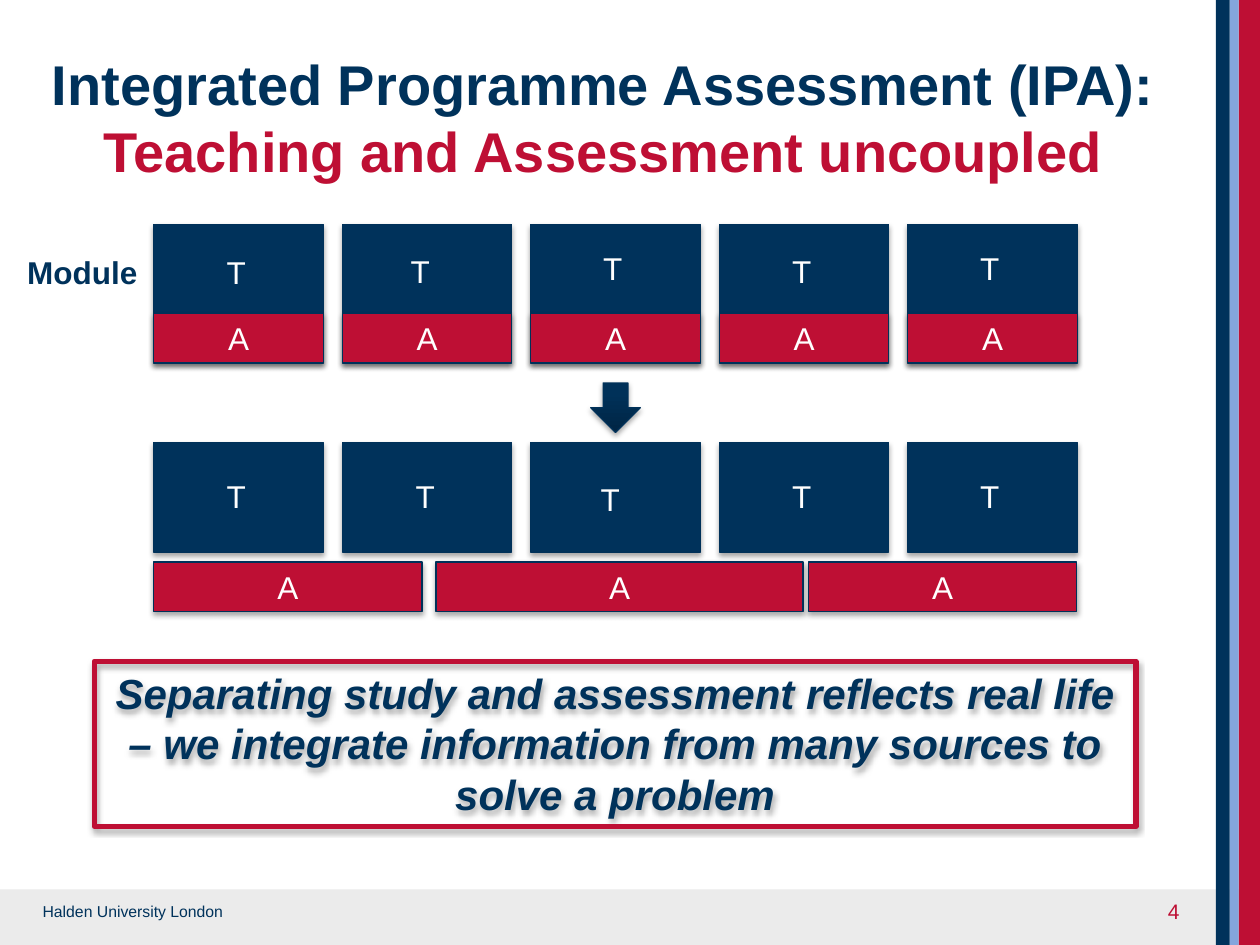
"""Builds a slide on uncoupling teaching from assessment across modules."""
from lxml import etree
from pptx import Presentation, util as u
from pptx.dml.color import RGBColor
from pptx.enum import shapes, text
from pptx.oxml import ns

COLOURS = {"navy": "00325B", "red": "BE0F34", "sky": "84A5DC", "grey": "EBEBEB",
           "white": "FFFFFF", "edge": "003159", "deep": "002544"}
RGB = {name: RGBColor.from_string(value) for name, value in COLOURS.items()}
RECT = shapes.MSO_SHAPE.RECTANGLE
SHADOW = (f'<a:outerShdw {ns.nsdecls("a")} blurRad="40000" dist="23000" dir="5400000" '
          'rotWithShape="0"><a:srgbClr val="000000"><a:alpha val="35000"/></a:srgbClr></a:outerShdw>')


def write(holder, words, size=18, colour="white", bold=False, italic=False,
          align="LEFT", anchor="TOP", wrap=True):
    frame = holder.text_frame
    frame.word_wrap = wrap
    frame.auto_size = text.MSO_AUTO_SIZE.NONE
    frame.vertical_anchor = text.MSO_ANCHOR[anchor]
    paragraph = frame.paragraphs[0]
    paragraph.alignment = text.PP_ALIGN[align]
    run = paragraph.add_run()
    run.text = words
    run.font.name = "Arial"
    run.font.size = u.Pt(size)
    run.font.bold, run.font.italic = bold, italic
    run.font.color.rgb = RGB[colour]


def block(left, top, width, height, colour, kind=RECT, raised=True):
    part = slide.shapes.add_shape(kind, u.Cm(left), u.Cm(top), u.Cm(width), u.Cm(height))
    part.shadow.inherit = False
    part.fill.solid()
    part.fill.fore_color.rgb = RGB[colour]
    if raised:
        part.line.color.rgb = RGB["edge"]
        part.line.width = u.Pt(0.75)
        part._element.spPr.find(ns.qn("a:effectLst")).append(etree.fromstring(SHADOW))
    else:
        part.line.fill.background()
    return part


deck = Presentation()
deck.slide_width, deck.slide_height = u.Cm(25.4), u.Cm(19.05)
slide = deck.slides.add_slide(deck.slide_layouts[5])

block(0, 17.93, 25.4, 1.12, "grey", raised=False)
for left, width, colour in [(24.97, 0.43, "red"), (24.79, 0.18, "sky"), (24.51, 0.28, "navy")]:
    block(left, 0, width, 19.05, colour, raised=False)

title = slide.shapes.title
title.left, title.top, title.width, title.height = u.Cm(0.61), u.Cm(0.76), u.Cm(23.11), u.Cm(3.18)
for words, colour in [("Integrated Programme Assessment (IPA): ", "navy"),
                      ("Teaching and Assessment uncoupled", "red")]:
    write(title, words, size=32, colour=colour, bold=True, align="CENTER", anchor="MIDDLE")

university = slide.shapes.add_textbox(u.Cm(0.61), u.Cm(18.06), u.Cm(4.5), u.Cm(0.64))
write(university, "Halden University London", size=9, colour="navy")
page_number = slide.shapes.add_textbox(u.Cm(18.11), u.Cm(17.86), u.Cm(5.92), u.Cm(1.02))
write(page_number, "4", size=12, colour="red", align="RIGHT", anchor="MIDDLE")

message = block(1.9, 13.33, 21, 3.33, "white")
message.shadow.inherit = False
message.fill.background()
message.line.color.rgb = RGB["red"]
message.line.width = u.Pt(3)
write(message, "Separating study and assessment reflects real life – we integrate "
      "information from many sources to solve a problem",
      size=24, colour="navy", bold=True, italic=True, align="CENTER")

uncoupling = block(11.91, 7.72, 1, 1, "navy", kind=shapes.MSO_SHAPE.DOWN_ARROW)
uncoupling.fill.gradient()
uncoupling.fill.gradient_angle = 90
for stop, position, colour in zip(uncoupling.fill.gradient_stops, (0, 0.8), ("deep", "edge")):
    stop.position = position
    stop.color.rgb = RGB[colour]

module_lefts = [3.1 + 3.8 * column for column in range(5)]
rows = [
    {"top": 4.52, "height": 2.79, "assessment_top": 6.32,
     "assessments": [(left, 3.42) for left in module_lefts],
     "letters": [(4.32, 4.98), (8.03, 4.95), (11.91, 4.9), (15.72, 4.95), (19.51, 4.9)]},
    {"top": 8.92, "height": 2.21, "assessment_top": 11.33,
     "assessments": [(3.1, 5.41), (8.79, 7.4), (16.3, 5.41)],
     "letters": [(4.32, 9.5), (8.13, 9.5), (11.86, 9.55), (15.72, 9.5), (19.51, 9.5)]},
]
for row in rows:
    for left in module_lefts:
        block(left, row["top"], 3.42, row["height"], "navy")
    for left, width in row["assessments"]:
        assessment = block(left, row["assessment_top"], width, 1, "red")
        write(assessment, "A", align="CENTER", anchor="MIDDLE")
    for left, top in row["letters"]:
        teaching = slide.shapes.add_textbox(u.Cm(left), u.Cm(top), u.Cm(1.7), u.Cm(1.02))
        write(teaching, "T")

module_label = slide.shapes.add_textbox(u.Cm(0.3), u.Cm(4.98), u.Cm(2.77), u.Cm(1.02))
write(module_label, "Module", colour="navy", bold=True, wrap=False)

deck.save("out.pptx")
